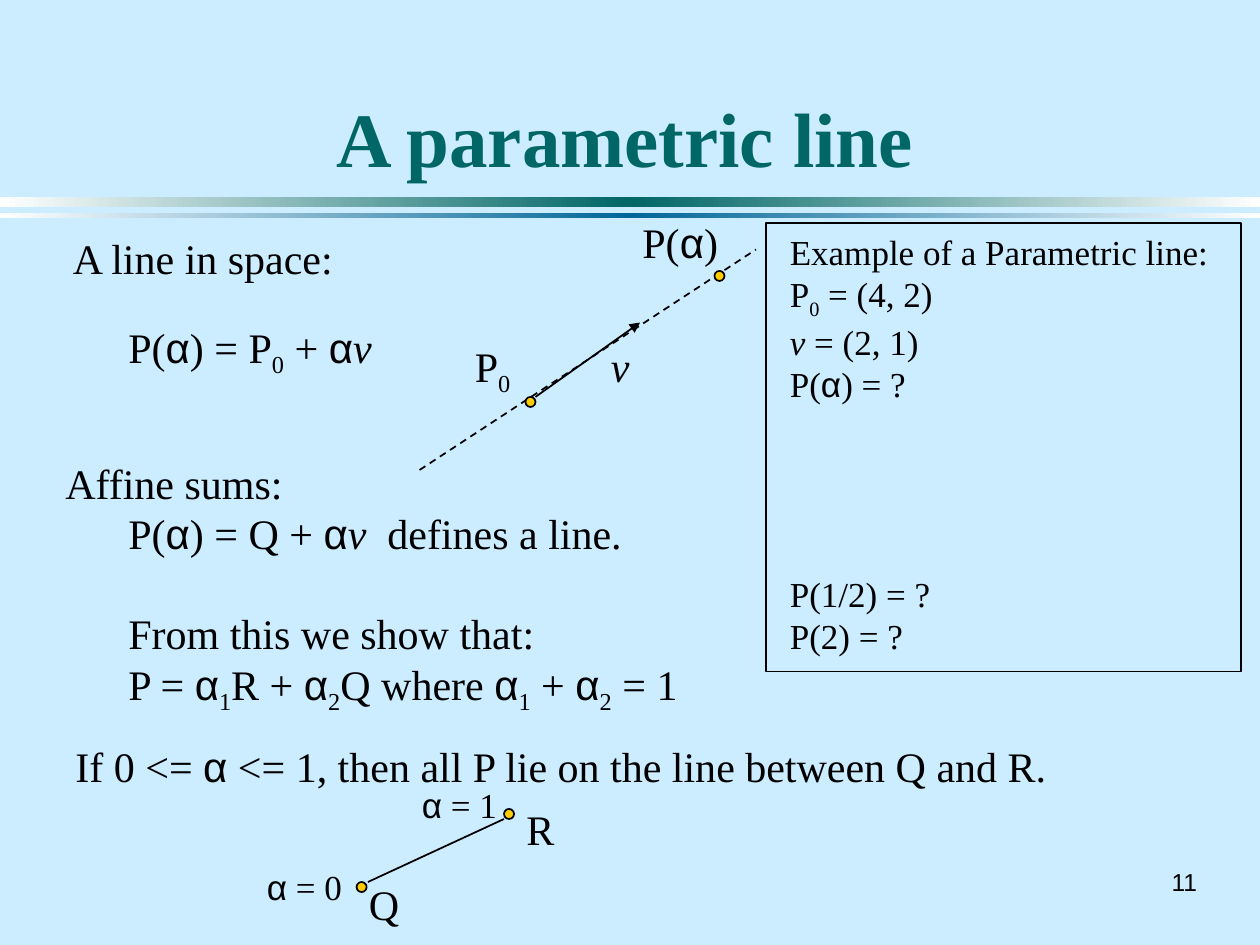
from copy import deepcopy
from itertools import groupby

from lxml import etree
from pptx import Presentation
from pptx.dml.color import RGBColor
from pptx.enum.dml import MSO_LINE
from pptx.enum.shapes import MSO_CONNECTOR, MSO_SHAPE
from pptx.enum.text import MSO_ANCHOR, PP_ALIGN
from pptx.oxml.ns import qn
from pptx.util import Inches, Pt

SKY = RGBColor(0xCC, 0xEC, 0xFF)
TEAL = RGBColor(0x00, 0x66, 0x66)
BLUE = RGBColor(0x00, 0x66, 0x99)
GOLD = RGBColor(0xFF, 0xCC, 0x00)
WHITE = RGBColor(0xFF, 0xFF, 0xFF)
BLACK = RGBColor(0x00, 0x00, 0x00)
SERIF, SANS = "Times New Roman", "Arial"
DOT = 0.08

# In the texts, "_" lowers the next character and "~" slants it.
BANDS = [(1.56, 0.08, TEAL), (1.69, 0.04, BLUE)]
LABELS = [
    ("A line in space:", 0.48, 1.8, 2.28, 24),
    ("P(α) = P_0 + α~v", 0.92, 2.5, 2.18, 24),
    ("P_0", 3.67, 2.65, 0.5, 24),
    ("~v", 4.75, 2.65, 0.31, 24),
    ("P(α)", 5, 1.67, 0.82, 24),
    ("If 0 <= α <= 1, then all P lie on the line between Q and R.", 0.5, 5.83, 7.94, 24),
    ("Q", 2.83, 6.92, 0.44, 24),
    ("R", 4.08, 6.33, 0.42, 24),
    ("α = 0", 2.02, 6.82, 0.81, 20),
    ("α = 1", 3.25, 6.17, 0.81, 20),
]
AFFINE = [
    ("Affine sums:", 0, 0),
    ("P(α) = Q + α~v  defines a line.", 0.5, 0),
    ("From this we show that:", 0.5, 28.5),
    ("P = α_1R + α_2Q where α_1 + α_2 = 1", 0.5, 0),
]
EXAMPLE = [
    ("Example of a Parametric line:", 0, 0),
    ("P_0 = (4, 2)", 0, 0),
    ("~v = (2, 1)", 0, 0),
    ("P(α) = ?", 0, 0),
    ("P(1/2) = ?", 0, 96),
    ("P(2) = ?", 0, 0),
]
LINES = [
    ((4.25, 3.15), (5.08, 2.56), "arrow"),
    ((3.33, 3.73), (6, 1.98), "dash"),
    ((2.92, 7), (4, 6.5), "plain"),
]
DOTS = [(4.17, 3.15), (5.67, 2.15), (2.83, 7), (4, 6.42)]


def split_runs(text):
    chars, mark = [], ""
    for ch in text:
        if ch in "_~":
            mark = ch
        else:
            chars.append((ch, (mark, SANS if ch == "α" else SERIF)))
            mark = ""
    for style, group in groupby(chars, key=lambda c: c[1]):
        yield "".join(c[0] for c in group), *style


def add_text(s, paragraphs, x, y, w, h, size, wrap=False):
    tf = s.shapes.add_textbox(Inches(x), Inches(y), Inches(w), Inches(h)).text_frame
    tf.word_wrap = wrap
    for i, (text, indent, gap) in enumerate(paragraphs):
        p = tf.add_paragraph() if i else tf.paragraphs[0]
        if indent:
            p._p.get_or_add_pPr().set("marL", str(Inches(indent)))
        if gap:
            p.space_before = Pt(gap)
        for piece, mark, font in split_runs(text):
            r = p.add_run()
            r.text = piece
            r.font.name, r.font.size = font, Pt(size)
            r.font.color.rgb = BLACK
            if mark == "~":
                r.font.italic = True
            elif mark == "_":
                r.font._element.set("baseline", "-25000")
    return tf


def add_shape(s, kind, x, y, w, h):
    sp = s.shapes.add_shape(kind, Inches(x), Inches(y), Inches(w), Inches(h))
    sp.shadow.inherit = False
    sp.line.color.rgb = BLACK
    sp.line.width = Pt(1)
    return sp


def add_band(s, y, h, color):
    sp = add_shape(s, MSO_SHAPE.RECTANGLE, 0, y, 10, h)
    sp.line.fill.background()
    sp.fill.gradient()
    sp.fill.gradient_angle = 0
    first = sp.fill.gradient_stops[0]._gs
    first.addnext(deepcopy(first))
    for stop, pos, rgb in zip(sp.fill.gradient_stops, (0, 0.5, 1), (WHITE, color, WHITE)):
        stop.position = pos
        stop.color.rgb = rgb


def add_line(s, start, end, style):
    ends = [Inches(v) for v in start + end]
    cn = s.shapes.add_connector(MSO_CONNECTOR.STRAIGHT, *ends)
    cn.line.color.rgb = BLACK
    cn.line.width = Pt(1)
    if style == "dash":
        cn.line.dash_style = MSO_LINE.DASH
    elif style == "arrow":
        etree.SubElement(cn.line._get_or_add_ln(), qn("a:tailEnd"), type="triangle")
    etree.SubElement(cn._element.spPr, qn("a:effectLst"))


def main():
    prs = Presentation()
    prs.slide_width, prs.slide_height = Inches(10), Inches(7.5)
    s = prs.slides.add_slide(prs.slide_layouts[6])
    s.background.fill.solid()
    s.background.fill.fore_color.rgb = SKY

    for band in BANDS:
        add_band(s, *band)

    title = add_text(s, [("A parametric line", 0, 0)], 0.67, 0.25, 8.58, 1.25, 44, wrap=True)
    title.vertical_anchor = MSO_ANCHOR.BOTTOM
    title.paragraphs[0].alignment = PP_ALIGN.CENTER
    font = title.paragraphs[0].runs[0].font
    font.bold, font.color.rgb = True, TEAL

    number = add_text(s, [("11", 0, 0)], 9.17, 6.83, 0.43, 0.33, 14)
    number.vertical_anchor = MSO_ANCHOR.MIDDLE
    number.paragraphs[0].alignment = PP_ALIGN.RIGHT
    number.paragraphs[0].runs[0].font.name = SANS

    for line in LINES:
        add_line(s, *line)
    for x, y in DOTS:
        dot = add_shape(s, MSO_SHAPE.OVAL, x, y, DOT, DOT)
        dot.fill.solid()
        dot.fill.fore_color.rgb = GOLD

    for text, x, y, w, size in LABELS:
        add_text(s, [(text, 0, 0)], x, y, w, size / 48, size)
    add_text(s, AFFINE, 0.42, 3.58, 7, 2.1, 24, wrap=True)
    add_text(s, EXAMPLE, 6.17, 1.78, 3.54, 3.47, 20)
    frame = add_shape(s, MSO_SHAPE.RECTANGLE, 6.08, 1.77, 3.77, 3.56)
    frame.fill.background()

    prs.save("out.pptx")


if __name__ == "__main__":
    main()
